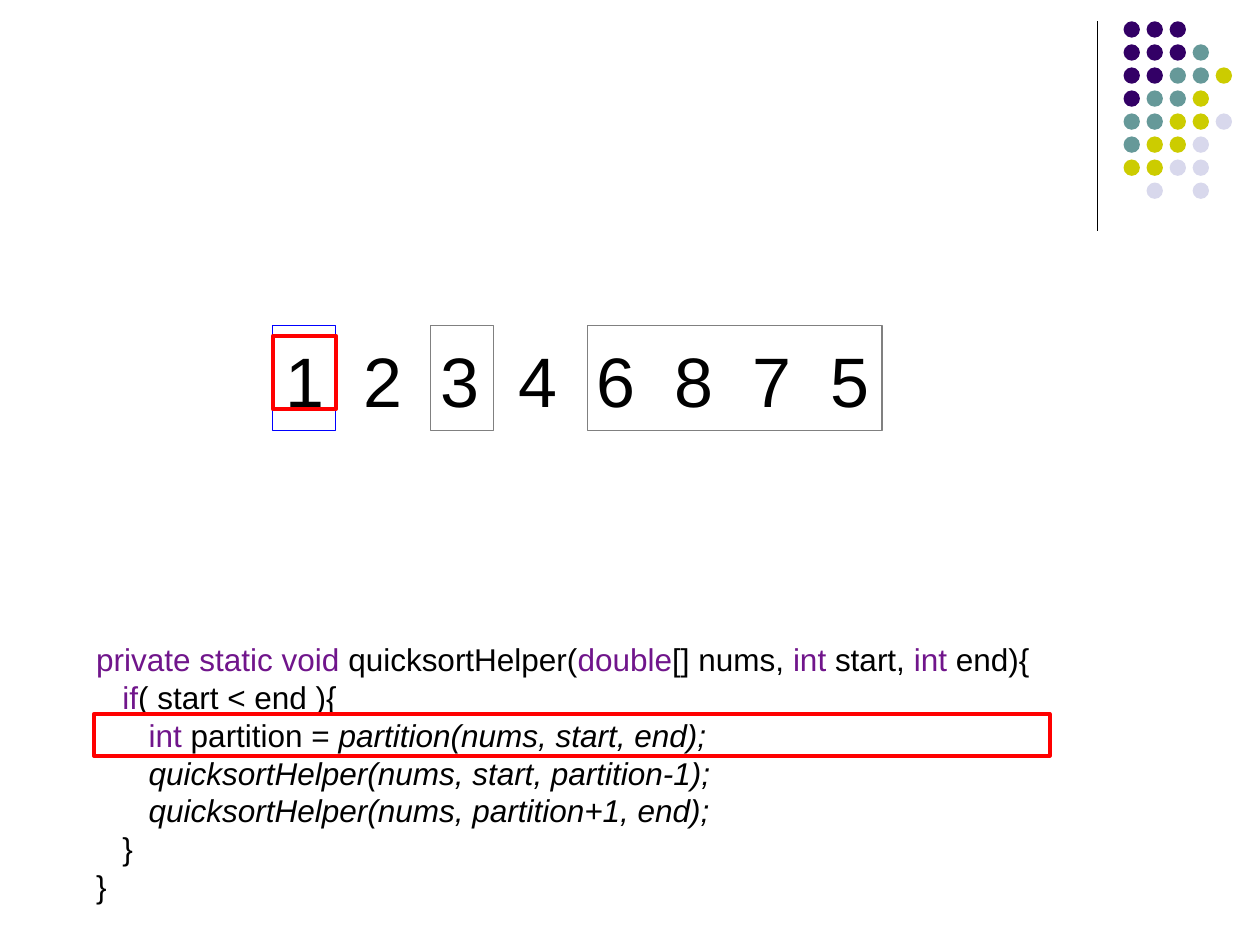
from pptx import Presentation
from pptx.dml.color import RGBColor
from pptx.enum.shapes import MSO_CONNECTOR, MSO_SHAPE
from pptx.util import Cm, Pt
from lxml import etree
from pptx.oxml.ns import qn

BLACK = RGBColor(0x00, 0x00, 0x00)
KEYWORD = RGBColor(0x70, 0x15, 0x8B)
RED = RGBColor(0xFF, 0x00, 0x00)
BLUE = RGBColor(0x00, 0x00, 0xFF)
GRAY = RGBColor(0x80, 0x80, 0x80)
DOT_COLORS = {
    "P": RGBColor(0x33, 0x00, 0x66),
    "T": RGBColor(0x66, 0x99, 0x99),
    "Y": RGBColor(0xCC, 0xCC, 0x00),
    "L": RGBColor(0xD8, 0xD8, 0xEC),
}

DOT_ROWS = ["PPP", "PPPT", "PPTTY", "PTTY", "TTYYL", "TYYL", "YYLL", " L L"]
DOT_LEFT, DOT_TOP, DOT_SIZE, DOT_PITCH = 22.65, 0.43, 0.33, 3.25 / 7

NUMBERS = [1, 2, 3, 4, 6, 8, 7, 5]
NUMBER_PITCH = 1.57

CODE = [
    [("private static void ", "k"), ("quicksortHelper(", ""), ("double", "k"),
     ("[] nums, ", ""), ("int", "k"), (" start, ", ""), ("int", "k"), (" end){", "")],
    [("   ", ""), ("if", "k"), ("( start < end ){", "")],
    [("      ", ""), ("int", "k"), (" partition = ", ""),
     ("partition(nums, start, end);", "i")],
    [("      quicksortHelper(nums, start, partition-1);", "i")],
    [("      quicksortHelper(nums, partition+1, end);", "i")],
    [("   }", "")],
    [("}", "")],
]

FRAMES = [
    (5.5, 6.56, 1.27, 2.12, BLUE, 0.75),
    (11.85, 6.56, 5.93, 2.12, GRAY, 0.75),
    (8.68, 6.56, 1.27, 2.12, GRAY, 0.75),
    (5.5, 6.77, 1.27, 1.48, RED, 2.25),
    (1.9, 14.39, 19.26, 0.85, RED, 2.25),
]


def add_shape(slide, kind, left, top, width, height):
    sp = slide.shapes.add_shape(kind, Cm(left), Cm(top), Cm(width), Cm(height))
    sp.shadow.inherit = False
    return sp


def add_dots(slide):
    for row, letters in enumerate(DOT_ROWS):
        for col, letter in enumerate(letters):
            if letter in DOT_COLORS:
                sp = add_shape(slide, MSO_SHAPE.OVAL, DOT_LEFT + col * DOT_PITCH,
                               DOT_TOP + row * DOT_PITCH, DOT_SIZE, DOT_SIZE)
                sp.fill.solid()
                sp.fill.fore_color.rgb = DOT_COLORS[letter]
                sp.line.fill.background()


def add_divider(slide):
    line = slide.shapes.add_connector(MSO_CONNECTOR.STRAIGHT,
                                      Cm(22.12), Cm(0.43), Cm(22.12), Cm(4.65))
    line.line.color.rgb = BLACK
    line.line.width = Pt(0.75)
    etree.SubElement(line._element.spPr, qn("a:effectLst"))


def add_textbox(slide, left, top, width, height):
    tf = slide.shapes.add_textbox(Cm(left), Cm(top), Cm(width), Cm(height)).text_frame
    tf.word_wrap = True
    return tf


def format_run(r, size, style=""):
    r.font.name = "Arial"
    r.font.size = Pt(size)
    r.font.italic = style == "i"
    r.font.color.rgb = KEYWORD if style == "k" else BLACK


def add_code(slide):
    tf = add_textbox(slide, 1.69, 12.78, 21.39, 5.64)
    for i, line in enumerate(CODE):
        p = tf.paragraphs[0] if i == 0 else tf.add_paragraph()
        p.line_spacing = Pt(21.6)
        for text, style in line:
            r = p.add_run()
            r.text = text
            format_run(r, 18, style)


def add_numbers(slide):
    p = add_textbox(slide, 5.5, 6.68, 13.34, 1.96).paragraphs[0]
    tabs = etree.SubElement(p._p.get_or_add_pPr(), qn("a:tabLst"))
    for i in range(1, len(NUMBERS)):
        etree.SubElement(tabs, qn("a:tab"), pos=str(Cm(i * NUMBER_PITCH)), algn="l")
    p.text = "\t".join(map(str, NUMBERS))
    for r in p.runs:
        format_run(r, 40)


def add_frames(slide):
    for left, top, width, height, color, weight in FRAMES:
        sp = add_shape(slide, MSO_SHAPE.RECTANGLE, left, top, width, height)
        sp.fill.background()
        sp.line.color.rgb = color
        sp.line.width = Pt(weight)


def main():
    prs = Presentation()
    prs.slide_width, prs.slide_height = Cm(25.4), Cm(19.05)
    slide = prs.slides.add_slide(prs.slide_layouts[6])
    add_divider(slide)
    add_dots(slide)
    add_code(slide)
    add_numbers(slide)
    add_frames(slide)
    prs.save("out.pptx")


if __name__ == "__main__":
    main()
